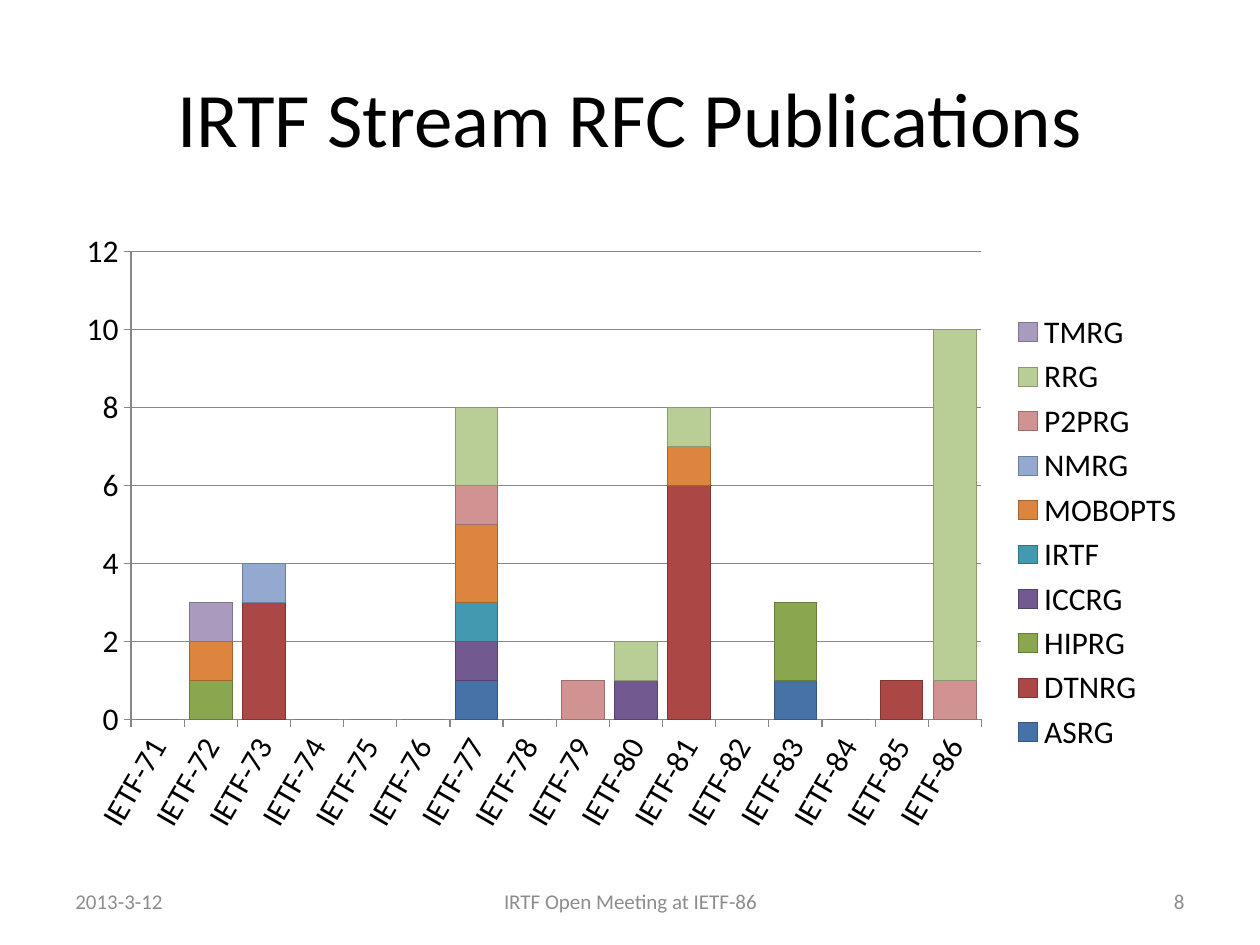
from dataclasses import dataclass, field

from lxml import etree
from pptx import Presentation
from pptx.chart.chart import Chart
from pptx.chart.data import CategoryChartData
from pptx.dml.color import RGBColor
from pptx.enum.chart import XL_CHART_TYPE, XL_LEGEND_POSITION, XL_TICK_MARK
from pptx.enum.text import MSO_ANCHOR, PP_ALIGN
from pptx.oxml.ns import qn
from pptx.util import Inches, Pt

LEFT, CENTER, RIGHT = PP_ALIGN.LEFT, PP_ALIGN.CENTER, PP_ALIGN.RIGHT
MIDDLE = MSO_ANCHOR.MIDDLE
STACKED = XL_CHART_TYPE.COLUMN_STACKED
LEGEND_RIGHT = XL_LEGEND_POSITION.RIGHT
TICK_OUT = XL_TICK_MARK.OUTSIDE
FONT = "Calibri"
BLACK, GRAY, AXIS_GRAY = "000000", "8C8C8C", "878787"
MEETINGS = range(71, 87)
PLOT_AREA = {"x": 0.06, "y": 0.05, "w": 0.75, "h": 0.75}


@dataclass
class Group:
    """A research group and its RFC count by IETF meeting."""
    name: str
    color: str
    counts: dict[int, int]


@dataclass
class Label:
    """A line of text with its box and format."""
    text: str
    left: float
    top: float
    width: float
    height: float
    style: dict = field(default_factory=dict)


GROUPS = [
    Group("ASRG", "4672A8", {77: 1, 83: 1}),
    Group("DTNRG", "AB4744", {73: 3, 81: 6, 85: 1}),
    Group("HIPRG", "8AA64F", {72: 1, 83: 2}),
    Group("ICCRG", "725990", {77: 1, 80: 1}),
    Group("IRTF", "4299B0", {77: 1}),
    Group("MOBOPTS", "DC853E", {72: 1, 77: 2, 81: 1}),
    Group("NMRG", "93A9CF", {73: 1}),
    Group("P2PRG", "D19392", {77: 1, 79: 1, 86: 1}),
    Group("RRG", "B9CD96", {77: 2, 80: 1, 81: 1, 86: 9}),
    Group("TMRG", "A99BBD", {72: 1}),
]
LABELS = [
    Label("IRTF Stream RFC Publications", 0.5, 0.3, 9, 1.25,
          {"size": 44, "color": BLACK, "align": CENTER}),
    Label("2013-3-12", 0.5, 6.95, 2.33, 0.4),
    Label("IRTF Open Meeting at IETF-86", 3.42, 6.95, 3.17, 0.4, {"align": CENTER}),
    Label("8", 7.17, 6.95, 2.33, 0.4, {"align": RIGHT}),
]


def rgb(color: str) -> RGBColor:
    """Turn a hex string into a colour."""
    return RGBColor.from_string(color)


def darker(color: str, share: float = 0.75) -> str:
    """Return the outline shade of a fill colour."""
    return "".join(f"{int(int(color[i:i + 2], 16) * share):02X}" for i in (0, 2, 4))


def write(frame, text: str, *, size=12, color=GRAY, align=LEFT) -> None:
    """Write one formatted line into a text frame."""
    frame.word_wrap = True
    frame.vertical_anchor = MIDDLE
    para = frame.paragraphs[0]
    para.alignment = align
    span = para.add_run()
    span.text = text
    span.font.name = FONT
    span.font.size = Pt(size)
    span.font.color.rgb = rgb(color)


def add_label(page, label: Label) -> None:
    """Draw one label on the page."""
    box = page.shapes.add_textbox(Inches(label.left), Inches(label.top),
                                  Inches(label.width), Inches(label.height))
    write(box.text_frame, label.text, **label.style)


def place_plot(chart: Chart) -> None:
    """Fix the inner plot area as shares of the chart frame."""
    area = chart.element.find(".//" + qn("c:plotArea"))
    for old in area.findall(qn("c:layout")):
        area.remove(old)
    layout = etree.Element(qn("c:layout"))
    area.insert(0, layout)
    manual = etree.SubElement(layout, qn("c:manualLayout"))
    settings = {"layoutTarget": "inner", "xMode": "edge", "yMode": "edge", **PLOT_AREA}
    for name, value in settings.items():
        etree.SubElement(manual, qn(f"c:{name}")).set("val", str(value))


def style_axes(chart: Chart) -> None:
    """Set ticks, lines, scale and slanted meeting names."""
    for axis in (chart.category_axis, chart.value_axis):
        axis.major_tick_mark = TICK_OUT
        axis.format.line.color.rgb = rgb(AXIS_GRAY)
        axis.tick_labels.font.size = Pt(18)
    scale = chart.value_axis
    scale.minimum_scale, scale.maximum_scale, scale.major_unit = 0, 12, 2
    scale.has_major_gridlines = True
    scale.major_gridlines.format.line.color.rgb = rgb(AXIS_GRAY)
    body = chart.element.find(f".//{qn('c:catAx')}/{qn('c:txPr')}/{qn('a:bodyPr')}")
    body.set("rot", str(-60 * 60000))
    body.set("vert", "horz")


def add_publications(page) -> None:
    """Draw the stacked chart of publications per meeting."""
    data = CategoryChartData()
    data.categories = [f"IETF-{meeting}" for meeting in MEETINGS]
    for group in GROUPS:
        data.add_series(group.name, [group.counts.get(m, 0) for m in MEETINGS])
    chart = page.shapes.add_chart(STACKED, Inches(0.5), Inches(1.75),
                                  Inches(9), Inches(4.95), data).chart
    chart.has_title = False
    chart.font.name = FONT
    chart.font.size = Pt(18)
    chart.font.color.rgb = rgb(BLACK)
    chart.has_legend = True
    chart.legend.position = LEGEND_RIGHT
    chart.legend.include_in_layout = False
    plot = chart.plots[0]
    plot.gap_width, plot.overlap = 25, 100
    plot.vary_by_categories = False
    for series, group in zip(plot.series, GROUPS):
        series.format.fill.solid()
        series.format.fill.fore_color.rgb = rgb(group.color)
        series.format.line.color.rgb = rgb(darker(group.color))
    style_axes(chart)
    place_plot(chart)


def main() -> None:
    """Build and save the deck."""
    deck = Presentation()
    deck.slide_width, deck.slide_height = Inches(10), Inches(7.5)
    page = deck.slides.add_slide(deck.slide_layouts[6])
    add_publications(page)
    for label in LABELS:
        add_label(page, label)
    deck.save("out.pptx")


if __name__ == "__main__":
    main()
